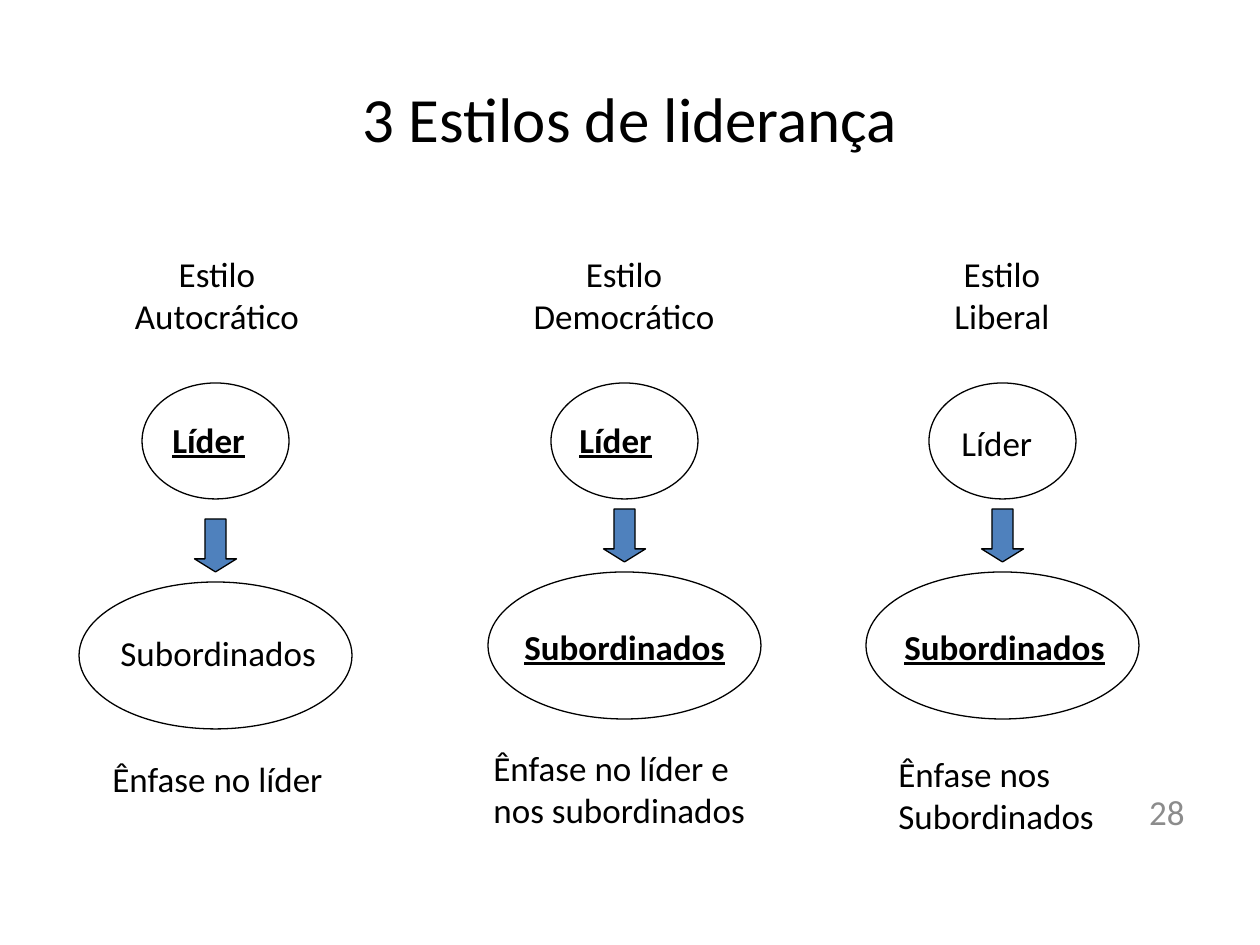
from dataclasses import dataclass

from pptx import Presentation
from pptx.dml.color import RGBColor
from pptx.enum.shapes import MSO_SHAPE
from pptx.enum.text import MSO_ANCHOR, PP_ALIGN
from pptx.util import Pt

EMU_PER_PX = 914400 / 126


@dataclass(frozen=True)
class Theme:
    font: str = "Calibri"
    title: int = 36
    body: int = 20
    line: float = 0.75
    ink: RGBColor = RGBColor.from_string("000000")
    muted: RGBColor = RGBColor.from_string("8C8C8C")
    arrow: RGBColor = RGBColor.from_string("4F81BD")


THEME = Theme()

# Column box: left, top, width, height; label: text, box within the column, strong
COLUMNS = [
    {
        "box": (79, 246, 273, 560),
        "drop": 10,
        "heading": ("Estilo Autocrático", (37, 0, 202, 97)),
        "labels": [
            ("Líder", (81, 166, 112, 55), True),
            ("Subordinados", (29, 379, 243, 55), False),
            ("Ênfase no líder", (21, 505, 263, 55), False),
        ],
    },
    {
        "box": (488, 246, 273, 634),
        "drop": 0,
        "heading": ("Estilo Democrático", (8, 0, 256, 97)),
        "labels": [
            ("Líder", (79, 166, 112, 55), True),
            ("Subordinados", (24, 373, 247, 55), True),
            ("Ênfase no líder e nos subordinados", (-7, 494, 284, 140), False),
        ],
    },
    {
        "box": (866, 246, 273, 597),
        "drop": 0,
        "heading": ("Estilo\vLiberal", (31, 0, 210, 97)),
        "labels": [
            ("Líder", (83, 169, 106, 55), False),
            ("Subordinados", (26, 373, 263, 55), True),
            ("Ênfase nos Subordinados", (20, 500, 305, 97), False),
        ],
    },
]


def px(n):
    return round(n * EMU_PER_PX)


def place(parent, box):
    """Turn a box relative to its parent into slide lengths."""
    x, y, w, h = box
    return px(parent[0] + x), px(parent[1] + y), px(w), px(h)


def add_text(s, parent, box, text, size=THEME.body, color=THEME.ink,
             strong=False, align=PP_ALIGN.LEFT, anchor=MSO_ANCHOR.TOP):
    tf = s.shapes.add_textbox(*place(parent, box)).text_frame
    tf.word_wrap = True
    tf.vertical_anchor = anchor
    p = tf.paragraphs[0]
    p.text = text
    p.alignment = align
    for r in p.runs:
        r.font.name = THEME.font
        r.font.size = Pt(size)
        r.font.color.rgb = color
        if strong:
            r.font.bold = r.font.underline = True


def add_outline(s, parent, box, kind, fill=None):
    sp = s.shapes.add_shape(kind, *place(parent, box))
    sp.shadow.inherit = False
    sp.line.color.rgb = THEME.ink
    sp.line.width = Pt(THEME.line)
    if fill is None:
        sp.fill.background()
    else:
        sp.fill.solid()
        sp.fill.fore_color.rgb = fill
    return sp


def add_title(s, box):
    add_text(s, box, (0, 0, *box[2:]), "3 Estilos de liderança", THEME.title,
             align=PP_ALIGN.CENTER, anchor=MSO_ANCHOR.MIDDLE)


def add_page_number(s, box):
    add_text(s, box, (0, 0, *box[2:]), "28", color=THEME.muted,
             align=PP_ALIGN.RIGHT, anchor=MSO_ANCHOR.MIDDLE)


def add_style_column(s, box, drop, heading, labels):
    """Leader over subordinates; drop lowers the arrow and the lower ellipse."""
    width = box[2]

    def centred(y, w, h):
        return (width - w) / 2, y, w, h

    text, heading_box = heading
    add_text(s, box, heading_box, text, align=PP_ALIGN.CENTER)
    for text, label_box, strong in labels:
        add_text(s, box, label_box, text, strong=strong)

    add_outline(s, box, centred(137, 147, 116), MSO_SHAPE.OVAL)
    add_outline(s, box, centred(326 + drop, width, 147), MSO_SHAPE.OVAL)
    arrow = add_outline(s, box, centred(263 + drop, 42, 53),
                        MSO_SHAPE.DOWN_ARROW, THEME.arrow)
    arrow.adjustments[0] = 0.5
    arrow.adjustments[1] = 0.31


def main():
    prs = Presentation()
    prs.slide_width, prs.slide_height = px(1260), px(945)
    s = prs.slides.add_slide(prs.slide_layouts[6])
    add_page_number(s, (903, 786, 294, 50))
    add_title(s, (63, 38, 1134, 158))
    for column in COLUMNS:
        add_style_column(s, **column)
    prs.save("out.pptx")


if __name__ == "__main__":
    main()
